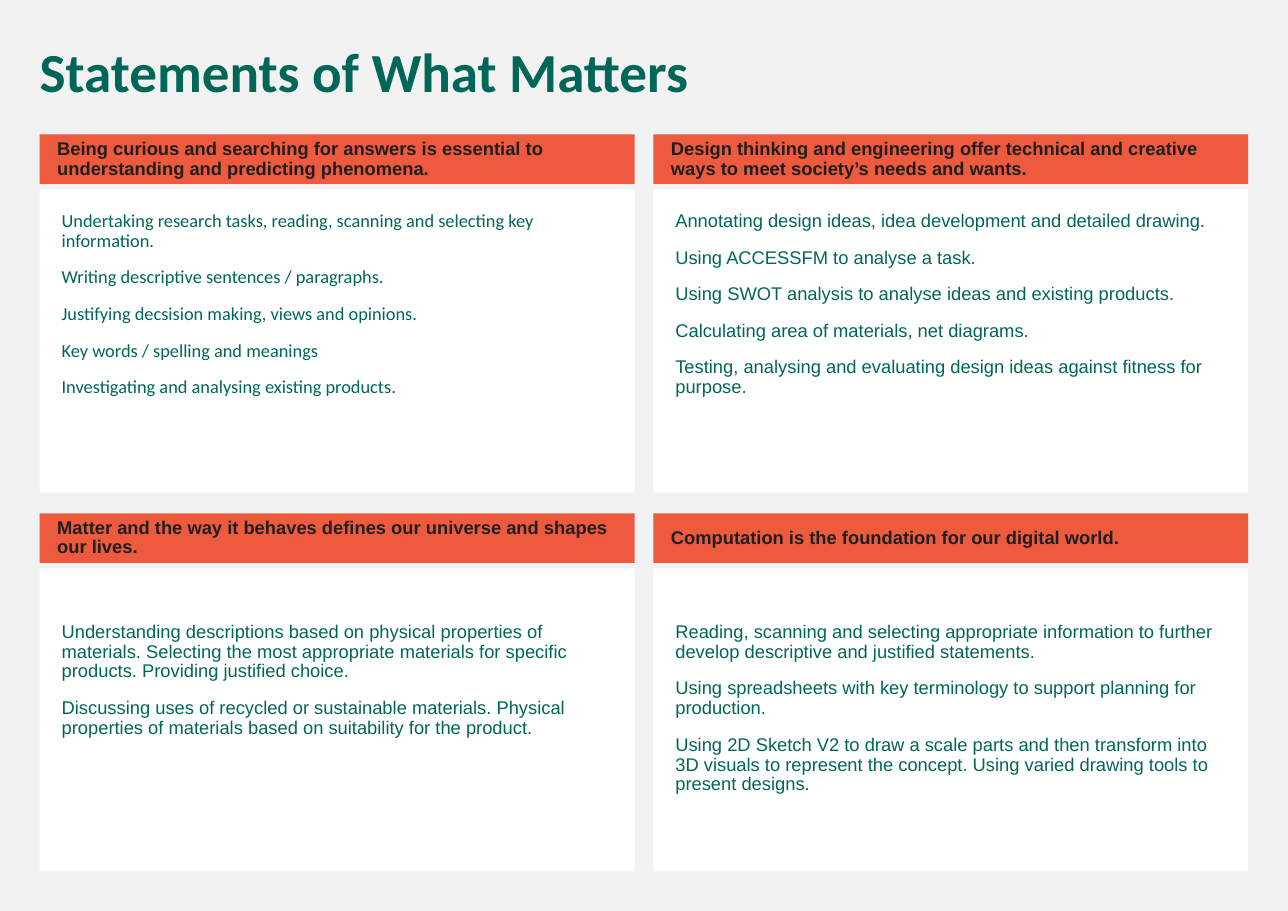
import dataclasses

import pptx
import pptx.dml.color
import pptx.enum.shapes
import pptx.enum.text
import pptx.util

Inches = pptx.util.Inches
Points = pptx.util.Pt
Anchor = pptx.enum.text.MSO_ANCHOR


@dataclasses.dataclass(frozen=True)
class Theme:
    page: str = "F2F2F2"
    panel: str = "FFFFFF"
    band: str = "ED5A3E"
    green: str = "006758"
    dark: str = "1F1F1F"
    title_size: int = 36
    text_size: int = 12
    title_font: str = "Calibri"
    text_font: str = "Arial"


@dataclasses.dataclass(frozen=True)
class Grid:
    left: float = 0.36
    top: float = 1.22
    column_step: float = 5.57
    row_step: float = 3.44
    width: float = 5.4
    band_height: float = 0.45
    panel_offset: float = 0.5
    panel_height: float = 2.75

    def origin(self, column, row):
        return self.left + column * self.column_step, self.top + row * self.row_step


class StatementPage:
    def __init__(self, deck, theme, grid):
        self.theme, self.grid = theme, grid
        self.page = deck.slides.add_slide(deck.slide_layouts[5])
        self.paint(self.page.background.fill, theme.page)

    def paint(self, fill, color):
        fill.solid()
        fill.fore_color.rgb = pptx.dml.color.RGBColor.from_string(color)

    def set_text(self, shape, lines, insets, anchor, font, size, color, bold=False):
        frame = shape.text_frame
        margins = dict(zip(("left", "top", "right", "bottom"), insets))
        frame_format = {f"margin_{side}": Inches(inset) for side, inset in margins.items()}
        frame_format |= {
            "word_wrap": True,
            "auto_size": pptx.enum.text.MSO_AUTO_SIZE.NONE,
            "vertical_anchor": anchor,
        }
        for name, value in frame_format.items():
            setattr(frame, name, value)
        para_format = {
            "alignment": pptx.enum.text.PP_ALIGN.LEFT,
            "line_spacing": 0.9,
            "space_before": Points(11),
        }
        span_format = {"name": font, "size": Points(size), "bold": bold}
        for index, line in enumerate(lines):
            para = frame.add_paragraph() if index else frame.paragraphs[0]
            for name, value in para_format.items():
                setattr(para, name, value)
            span = para.add_run()
            span.text = line
            for name, value in span_format.items():
                setattr(span.font, name, value)
            span.font.color.rgb = pptx.dml.color.RGBColor.from_string(color)

    def title(self, text):
        box = self.page.shapes.title
        place = {"left": 0.26, "top": 0.36, "width": 11.08, "height": 0.65}
        for name, value in place.items():
            setattr(box, name, Inches(value))
        self.set_text(box, [text], (0.1, 0.05, 0.1, 0.05), Anchor.TOP,
                      self.theme.title_font, self.theme.title_size, self.theme.green, True)

    def rectangle(self, left, top, height, color):
        box = self.page.shapes.add_shape(
            pptx.enum.shapes.MSO_SHAPE.RECTANGLE,
            Inches(left), Inches(top), Inches(self.grid.width), Inches(height))
        box.shadow.inherit = False
        box.line.fill.background()
        self.paint(box.fill, color)
        return box

    def band(self, column, row, heading):
        left, top = self.grid.origin(column, row)
        box = self.rectangle(left, top, self.grid.band_height, self.theme.band)
        self.set_text(box, [heading], (0.16, 0.05, 0.1, 0.05), Anchor.MIDDLE,
                      self.theme.text_font, self.theme.text_size, self.theme.dark, True)

    def panel(self, column, row, lines, font, top_inset):
        left, top = self.grid.origin(column, row)
        box = self.rectangle(left, top + self.grid.panel_offset,
                             self.grid.panel_height, self.theme.panel)
        self.set_text(box, lines, (0.2, top_inset, 0.2, 0.2), Anchor.TOP,
                      font, self.theme.text_size, self.theme.green)


STATEMENTS = [
    (0, 0, "Calibri",
     "Being curious and searching for answers is essential to understanding and predicting phenomena.",
     ["Undertaking research tasks, reading, scanning and selecting key information.",
      "Writing descriptive sentences / paragraphs.",
      "Justifying decsision making, views and opinions.",
      "Key words / spelling and meanings",
      "Investigating and analysing existing products."]),
    (1, 0, "Arial",
     "Design thinking and engineering offer technical and creative ways to meet society’s needs and wants.",
     ["Annotating design ideas, idea development and detailed drawing.",
      "Using ACCESSFM to analyse a task.",
      "Using SWOT analysis to analyse ideas and existing products.",
      "Calculating area of materials, net diagrams.",
      "Testing, analysing and evaluating design ideas against fitness for purpose."]),
    (0, 1, "Arial",
     "Matter and the way it behaves defines our universe and shapes our lives.",
     ["Understanding descriptions based on physical properties of materials. Selecting the most "
      "appropriate materials for specific products. Providing justified choice.",
      "Discussing uses of recycled or sustainable materials. Physical properties of materials "
      "based on suitability for the product."]),
    (1, 1, "Arial",
     "Computation is the foundation for our digital world.",
     ["Reading, scanning and selecting appropriate information to further develop descriptive "
      "and justified statements.",
      "Using spreadsheets with key terminology to support planning for production.",
      "Using 2D Sketch V2 to draw a scale parts and then transform into 3D visuals to represent "
      "the concept. Using varied drawing tools to present designs."]),
]
TOP_INSETS = (0.2, 0.49)


def main():
    deck = pptx.Presentation()
    deck.slide_width, deck.slide_height = Inches(11.69), Inches(8.27)
    page = StatementPage(deck, Theme(), Grid())
    page.title("Statements of What Matters")
    for column, row, font, heading, lines in STATEMENTS:
        page.band(column, row, heading)
        page.panel(column, row, lines, font, TOP_INSETS[row])
    deck.save("out.pptx")


if __name__ == "__main__":
    main()
